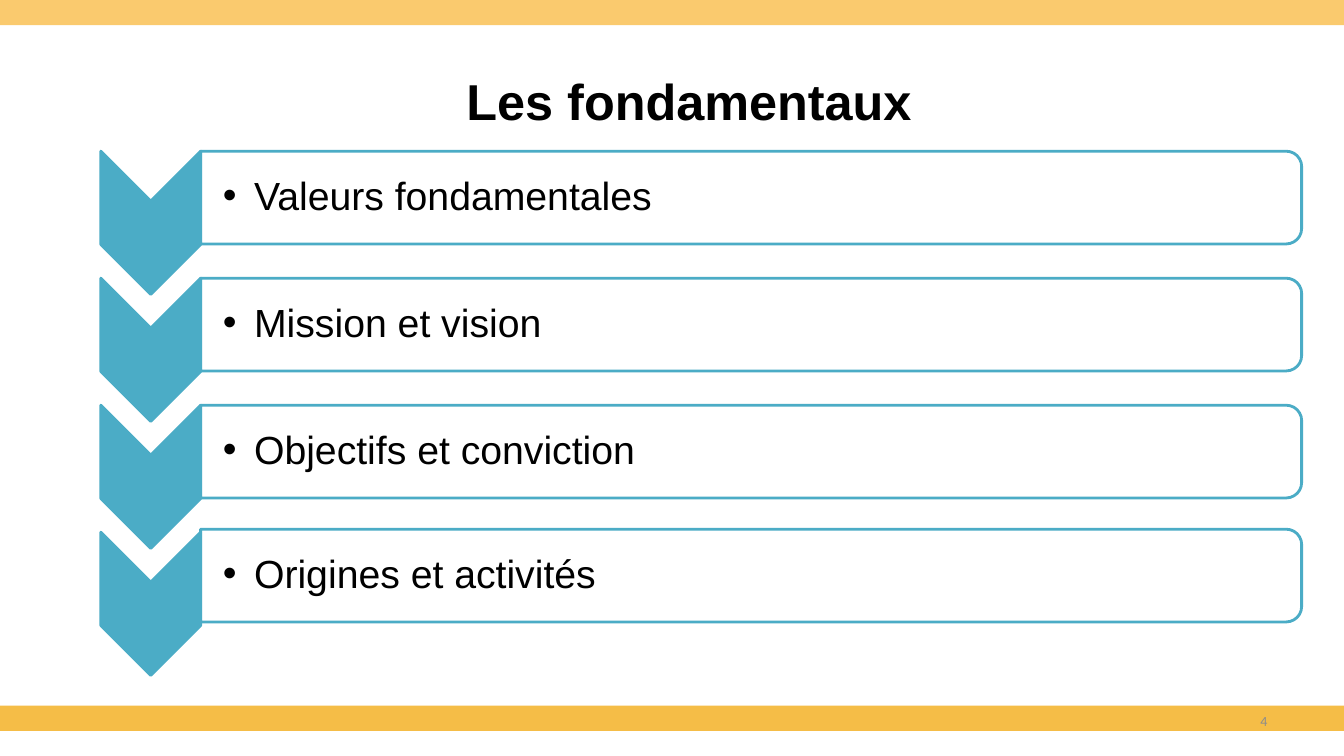
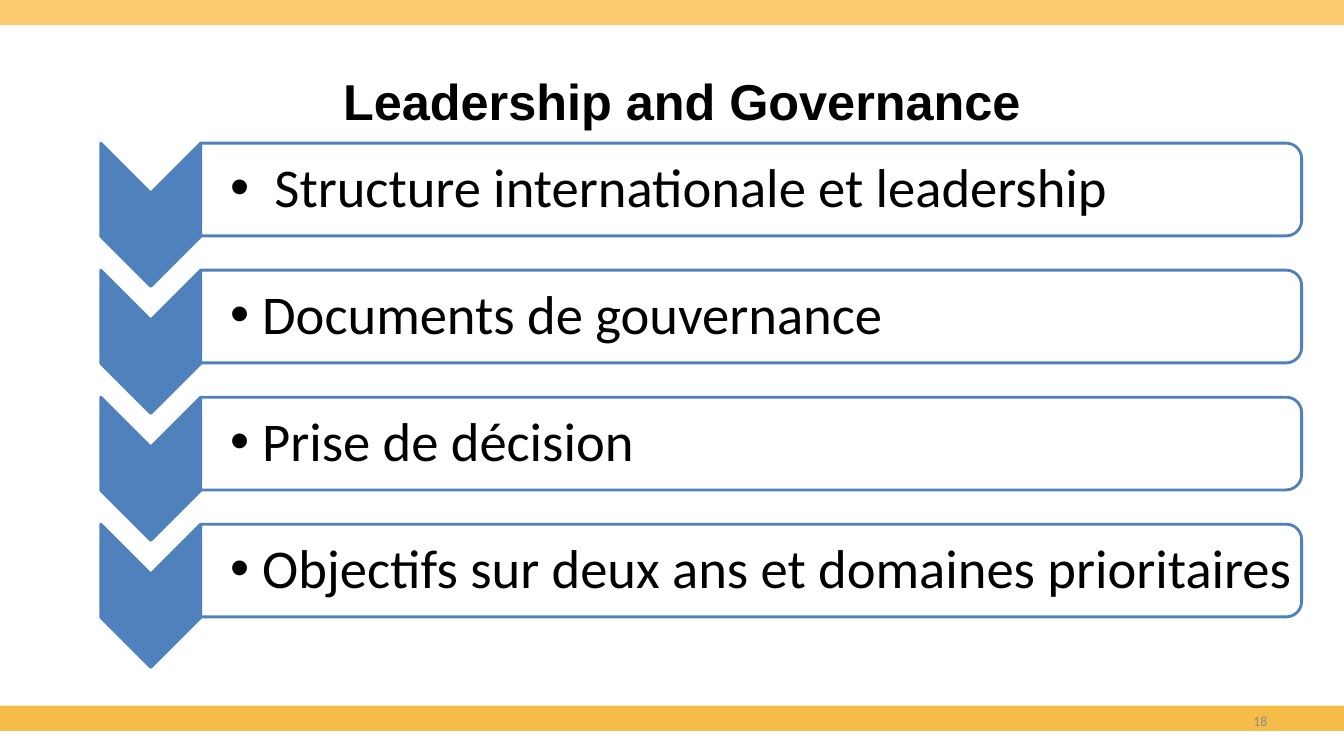
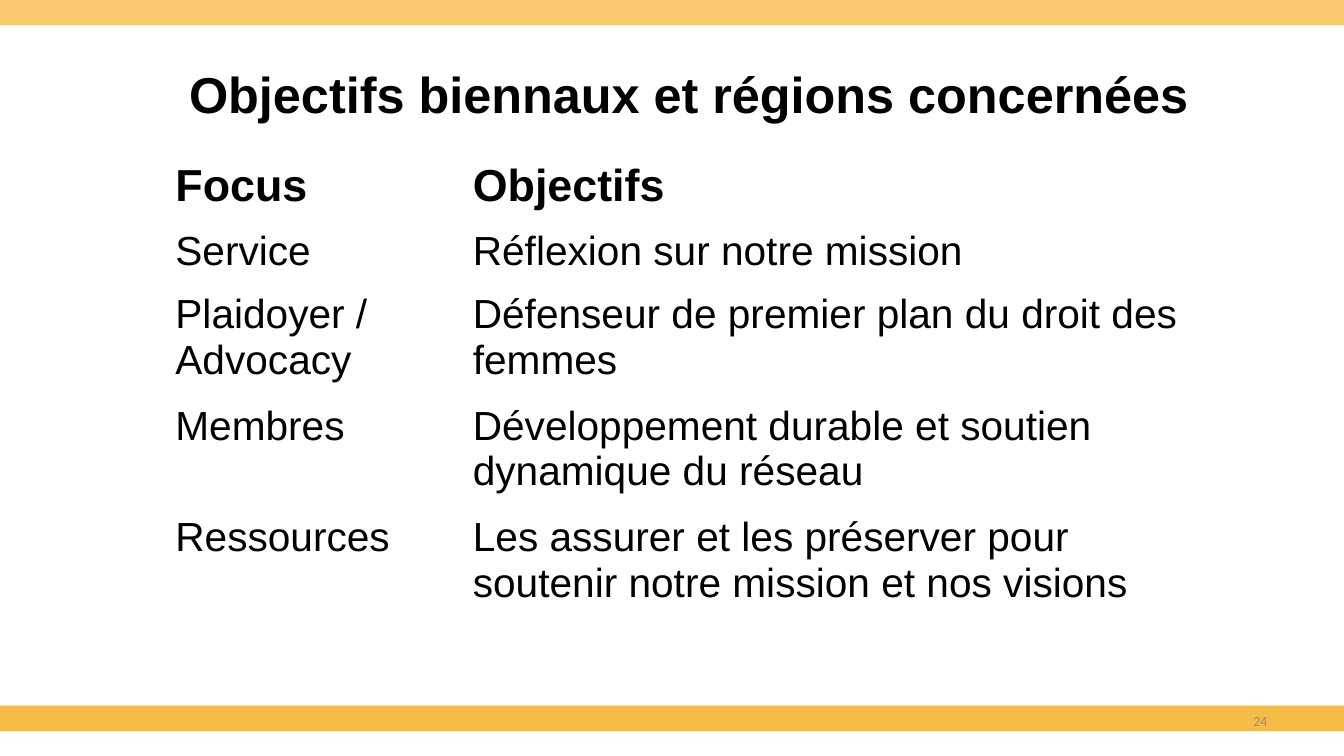
from dataclasses import dataclass

from lxml import etree
from pptx import Presentation
from pptx.dml.color import RGBColor
from pptx.enum.shapes import MSO_SHAPE
from pptx.enum.text import MSO_ANCHOR, PP_ALIGN
from pptx.oxml.ns import qn
from pptx.util import Inches, Pt

RECTANGLE = MSO_SHAPE.RECTANGLE
CHEVRON = MSO_SHAPE.CHEVRON
ROUNDED_TOP = MSO_SHAPE.ROUND_2_SAME_RECTANGLE
MIDDLE = MSO_ANCHOR.MIDDLE
CENTER, LEFT, RIGHT = PP_ALIGN.CENTER, PP_ALIGN.LEFT, PP_ALIGN.RIGHT

COLORS = {
    "top_band": "FACA6E",
    "bottom_band": "F5BD47",
    "teal": "4BACC6",
    "blue": "4F81BD",
    "text": "000000",
    "page_number": "8C8C8C",
    "white": "FFFFFF",
}

# Text formats
TITLE = {"name": "Arial", "size": Pt(36), "bold": True}
PAGE_NUMBER = {"name": "Calibri", "size": Pt(10)}
TABLE_HEAD = {"name": "Arial", "size": Pt(32), "bold": True}
TABLE_BODY = {"name": "Arial", "size": Pt(29), "bold": False}

# Chevron list measures, in inches
STEP_PITCH = 1.26
CHEVRON_LEFT, CHEVRON_WIDTH, CHEVRON_HEIGHT = 1.0, 0.99, 1.42
BAR_LEFT, BAR_WIDTH, BAR_HEIGHT = 1.99, 10.92, 0.92
LABEL_HEIGHT = 0.83
HANGING = Inches(0.31)


@dataclass
class Step:
    text: str
    lift: float = 0


@dataclass
class ChevronList:
    title: str
    number: str
    color: str
    top: float
    font: str
    size: int
    indent: float
    margin: float
    steps: list[Step]


CHEVRON_LISTS = [
    ChevronList("Les fondamentaux", "4", "teal", 1.5, "Arial", 28, 0.22, 0.02, [
        Step("Valeurs fondamentales"),
        Step("Mission et vision"),
        Step("Objectifs et conviction"),
        Step("Origines et activités", lift=0.03),
    ]),
    ChevronList("Leadership and Governance ", "18", "blue", 1.42, "Calibri", 39, 0.3, 0.03, [
        Step(" Structure internationale et leadership"),
        Step("Documents de gouvernance"),
        Step("Prise de décision"),
        Step("Objectifs sur deux ans et domaines prioritaires"),
    ]),
]

GOALS = [
    ("Focus", "Objectifs"),
    ("Service", "Réflexion sur notre mission"),
    ("Plaidoyer / Advocacy", "Défenseur de premier plan du droit des femmes"),
    ("Membres", "Développement durable et soutien dynamique du réseau"),
    ("Ressources", "Les assurer et les préserver pour soutenir notre mission et nos visions"),
    ("", ""),
]
GOAL_COLUMNS = [2.95, 7.49]
GOAL_ROWS = [0.64, 0.59, 1.06, 1.06, 1.06, 0.82]


def rgb(color: str) -> RGBColor:
    return RGBColor.from_string(COLORS[color])


def apply(target, values: dict) -> None:
    for name, value in values.items():
        setattr(target, name, value)


def place(shape, left: float, top: float, width: float, height: float) -> None:
    apply(shape, {"left": Inches(left), "top": Inches(top),
                  "width": Inches(width), "height": Inches(height)})


def write(frame, text: str, style: dict, color: str = "text", align=LEFT):
    """Fill the first paragraph of a text frame and return it."""
    para = frame.paragraphs[0]
    para.alignment = align
    span = para.add_run()
    span.text = text
    apply(span.font, style)
    span.font.color.rgb = rgb(color)
    return para


def add_filled(page, kind, left: float, top: float, width: float, height: float,
               fill: str, line: str | None = None):
    shape = page.shapes.add_shape(kind, Inches(left), Inches(top), Inches(width), Inches(height))
    shape.shadow.inherit = False
    shape.fill.solid()
    shape.fill.fore_color.rgb = rgb(fill)
    if line:
        shape.line.color.rgb = rgb(line)
        shape.line.width = Pt(2)
    else:
        shape.line.fill.background()
    return shape


def add_turned(page, kind, left: float, top: float, width: float, height: float,
               fill: str, line: str):
    """Add a shape turned by 90 degrees that covers the given area."""
    shift = (width - height) / 2
    shape = add_filled(page, kind, left + shift, top - shift, height, width, fill, line)
    shape.rotation = 90
    return shape


def add_text_box(page, left: float, top: float, width: float, height: float):
    frame = page.shapes.add_textbox(
        Inches(left), Inches(top), Inches(width), Inches(height)).text_frame
    apply(frame, {"word_wrap": True, "vertical_anchor": MIDDLE})
    return frame


def add_page(deck, title: str, number: str, title_top: float = 0.37):
    page = deck.slides.add_slide(deck.slide_layouts[5])
    heading = page.shapes.title
    place(heading, 1, title_top, 11.67, 1.25)
    heading.text_frame.vertical_anchor = MIDDLE
    write(heading.text_frame, title, TITLE, align=CENTER)
    write(add_text_box(page, 9.56, 6.95, 3.11, 0.4), number, PAGE_NUMBER, "page_number", RIGHT)
    return page


def add_master_bands(deck, page) -> None:
    """Draw the bands and move them to the back of the slide master."""
    for top, color in ((0, "top_band"), (7, "bottom_band")):
        band = add_filled(page, RECTANGLE, 0, top, 13.33, 0.25, color)
        deck.slide_master.shapes.element.insert(2, band.element)


def add_bullet(para) -> None:
    properties = para._p.get_or_add_pPr()
    properties.set("marL", str(int(HANGING)))
    properties.set("indent", str(-int(HANGING)))
    etree.SubElement(properties, qn("a:buFont"), typeface="Arial")
    etree.SubElement(properties, qn("a:buChar"), char="•")


def add_chevron_list(page, content: ChevronList) -> None:
    style = {"name": content.font, "size": Pt(content.size)}
    for index, step in enumerate(content.steps):
        top = content.top + index * STEP_PITCH
        bar_top = top - step.lift
        add_turned(page, CHEVRON, CHEVRON_LEFT, top, CHEVRON_WIDTH, CHEVRON_HEIGHT,
                   content.color, content.color)
        bar = add_turned(page, ROUNDED_TOP, BAR_LEFT, bar_top, BAR_WIDTH, BAR_HEIGHT,
                         "white", content.color)
        fill_color = bar.element.spPr.find(qn("a:solidFill")).find(qn("a:srgbClr"))
        etree.SubElement(fill_color, qn("a:alpha"), val="90000")

        # Label over the bar
        frame = add_text_box(page, BAR_LEFT, bar_top + (BAR_HEIGHT - LABEL_HEIGHT) / 2,
                             BAR_WIDTH, LABEL_HEIGHT)
        margin = Inches(content.margin)
        apply(frame, {"margin_left": Inches(content.indent), "margin_right": margin,
                      "margin_top": margin, "margin_bottom": margin})
        add_bullet(frame.paragraphs[0])
        para = write(frame, step.text, style)
        apply(para, {"line_spacing": 0.9, "space_after": Pt(round(content.size * 0.15))})


def add_goal_table(page) -> None:
    table = page.shapes.add_table(
        len(GOAL_ROWS), len(GOAL_COLUMNS), Inches(1.61), Inches(1.53),
        Inches(sum(GOAL_COLUMNS)), Inches(sum(GOAL_ROWS))).table
    table.horz_banding = False
    for column, width in zip(table.columns, GOAL_COLUMNS):
        column.width = Inches(width)
    for index, (row, height, texts) in enumerate(zip(table.rows, GOAL_ROWS, GOALS)):
        row.height = Inches(height)
        for cell, text in zip(row.cells, texts):
            cell.fill.solid()
            cell.fill.fore_color.rgb = rgb("white")
            apply(cell, {"margin_left": Inches(0.13), "margin_right": Inches(0.13),
                         "margin_top": Inches(0.07), "margin_bottom": Inches(0.07)})
            if text:
                write(cell.text_frame, text, TABLE_BODY if index else TABLE_HEAD)


def main() -> None:
    deck = Presentation()
    apply(deck, {"slide_width": Inches(13.33), "slide_height": Inches(7.5)})

    # Chevron list slides
    for content in CHEVRON_LISTS:
        add_chevron_list(add_page(deck, content.title, content.number), content)

    # Table slide
    page = add_page(deck, "Objectifs biennaux et régions concernées", "24", title_top=0.3)
    add_goal_table(page)

    add_master_bands(deck, page)
    deck.save("out.pptx")


if __name__ == "__main__":
    main()
